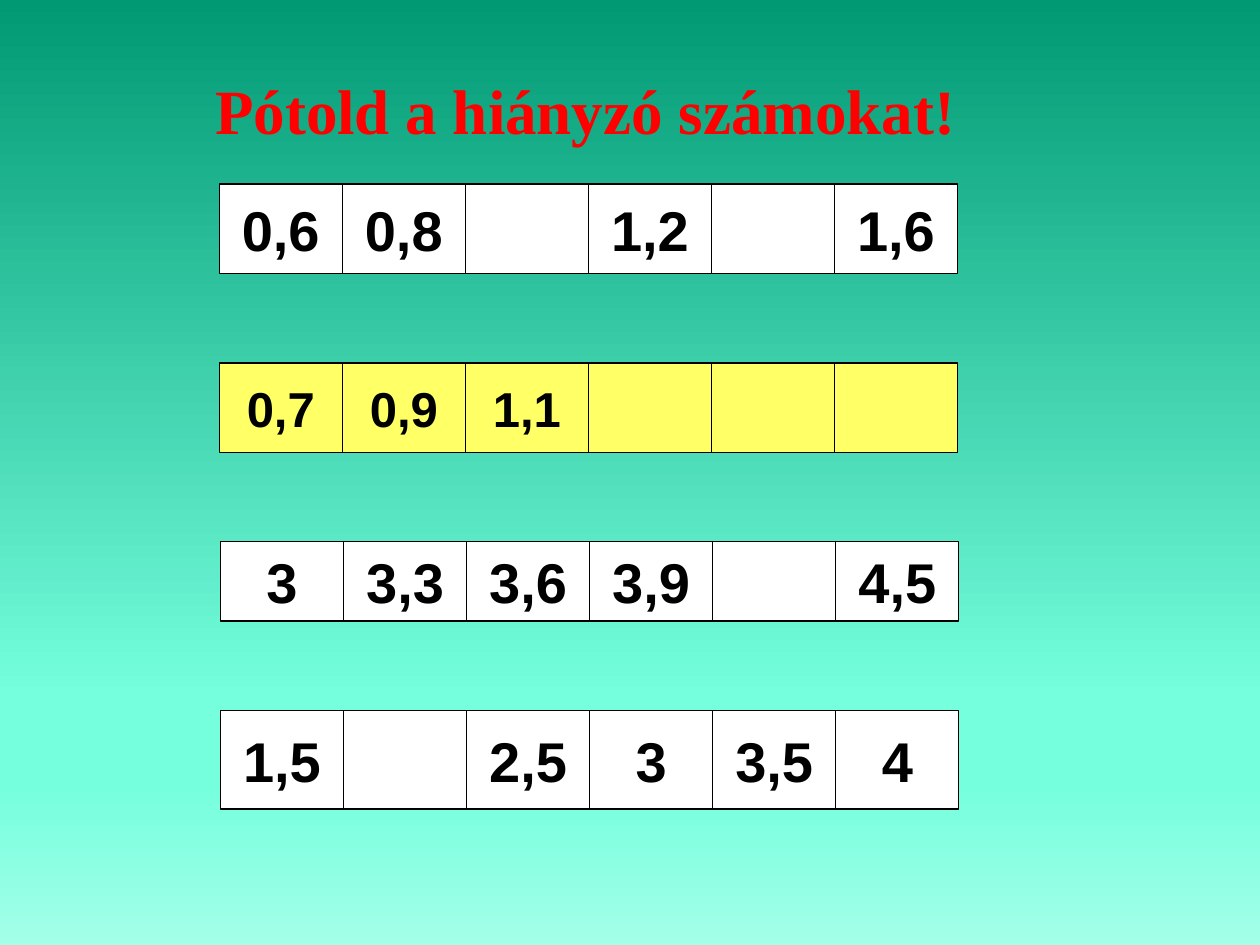
from lxml.etree import SubElement
from pptx import Presentation
from pptx.dml.color import RGBColor
from pptx.enum.shapes import MSO_SHAPE
from pptx.enum.text import MSO_ANCHOR, MSO_AUTO_SIZE, PP_ALIGN
from pptx.oxml.ns import qn
from pptx.util import Inches, Pt


def paint(color, value):
    color.rgb = RGBColor.from_string(value)


def write(shape, text, font, size, color):
    """Put one bold, centred run into the shape."""
    para = shape.text_frame.paragraphs[0]
    para.alignment = PP_ALIGN.CENTER
    run = para.add_run()
    run.text = text
    run.font.name = font
    run.font.size = Pt(size)
    run.font.bold = True
    paint(run.font.color, color)


deck = Presentation()
deck.slide_width = Inches(10)
deck.slide_height = Inches(7.5)
slide = deck.slides.add_slide(deck.slide_layouts[5])

# Background: four-stop gradient running from top to bottom
back = slide.background.fill
back.gradient()
back.gradient_angle = 270
stops = slide.element.find(".//" + qn("a:gsLst"))
stops.clear()
for pos, color in [(0, "009973"), (74, "75FFDD"), (83, "75FFDD"), (100, "A3FFE8")]:
    stop = SubElement(stops, qn("a:gs"), pos=str(pos * 1000))
    SubElement(stop, qn("a:srgbClr"), val=color)

title = slide.shapes.title
title.left, title.top = Inches(1.36), Inches(0.52)
title.width, title.height = Inches(6.57), Inches(0.71)
title.text_frame.vertical_anchor = MSO_ANCHOR.TOP
title.text_frame.auto_size = MSO_AUTO_SIZE.SHAPE_TO_FIT_TEXT
write(title, "Pótold a hiányzó számokat!", "Times New Roman", 36, "FF0000")

# Number rows: left, top, height, fill, text size, cells
rows = [
    (1.74, 1.46, 0.71, "FFFFFF", 32, ["0,6", "0,8", "", "1,2", "", "1,6"]),
    (1.74, 2.88, 0.71, "FFFF66", 28, ["0,7", "0,9", "1,1", "", "", ""]),
    (1.75, 4.3, 0.63, "FFFFFF", 32, ["3", "3,3", "3,6", "3,9", "", "4,5"]),
    (1.75, 5.64, 0.78, "FFFFFF", 32, ["1,5", "", "2,5", "3", "3,5", "4"]),
]
step = 5.86 / 6

for left, top, height, fill, size, cells in rows:
    group = slide.shapes.add_group_shape()
    for col, text in enumerate(cells):
        cell = group.shapes.add_shape(
            MSO_SHAPE.RECTANGLE, Inches(left + col * step), Inches(top),
            Inches(step), Inches(height))
        cell.shadow.inherit = False
        cell.fill.solid()
        paint(cell.fill.fore_color, fill)
        paint(cell.line.color, "000000")
        cell.line.width = Pt(0.75)
        cell.text_frame.word_wrap = False
        cell.text_frame.vertical_anchor = MSO_ANCHOR.MIDDLE
        if text:
            write(cell, text, "Arial", size, "000000")

deck.save("out.pptx")
